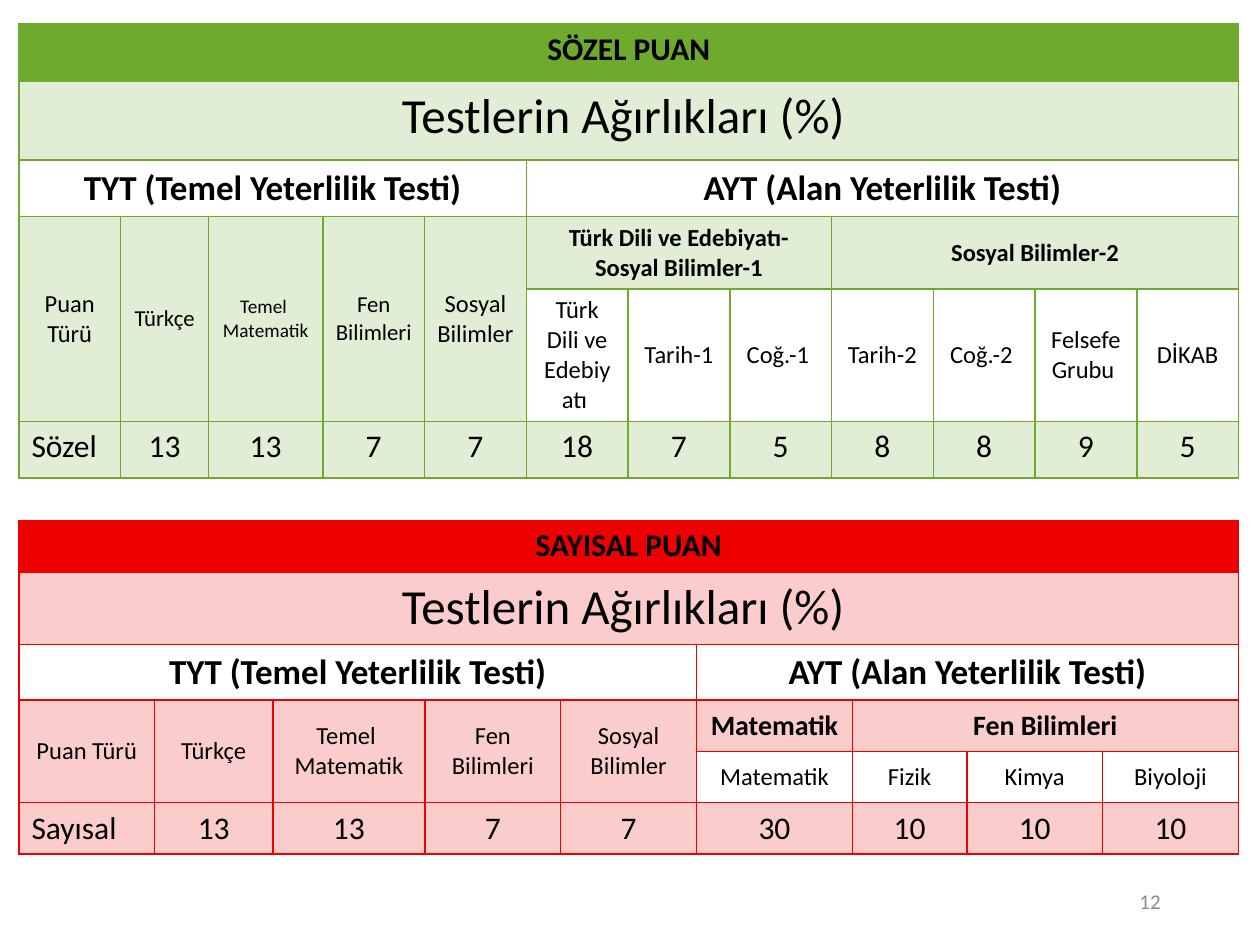
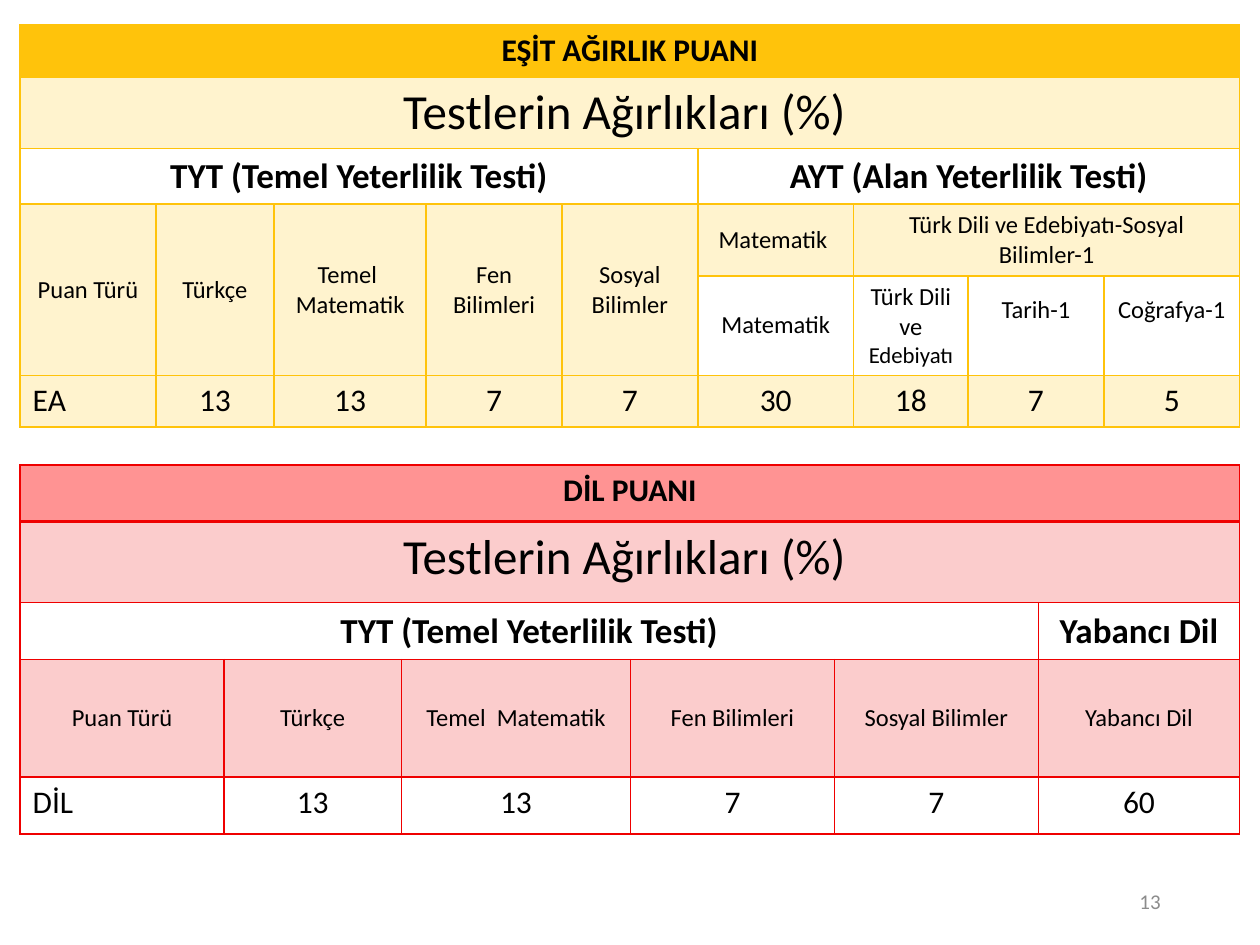
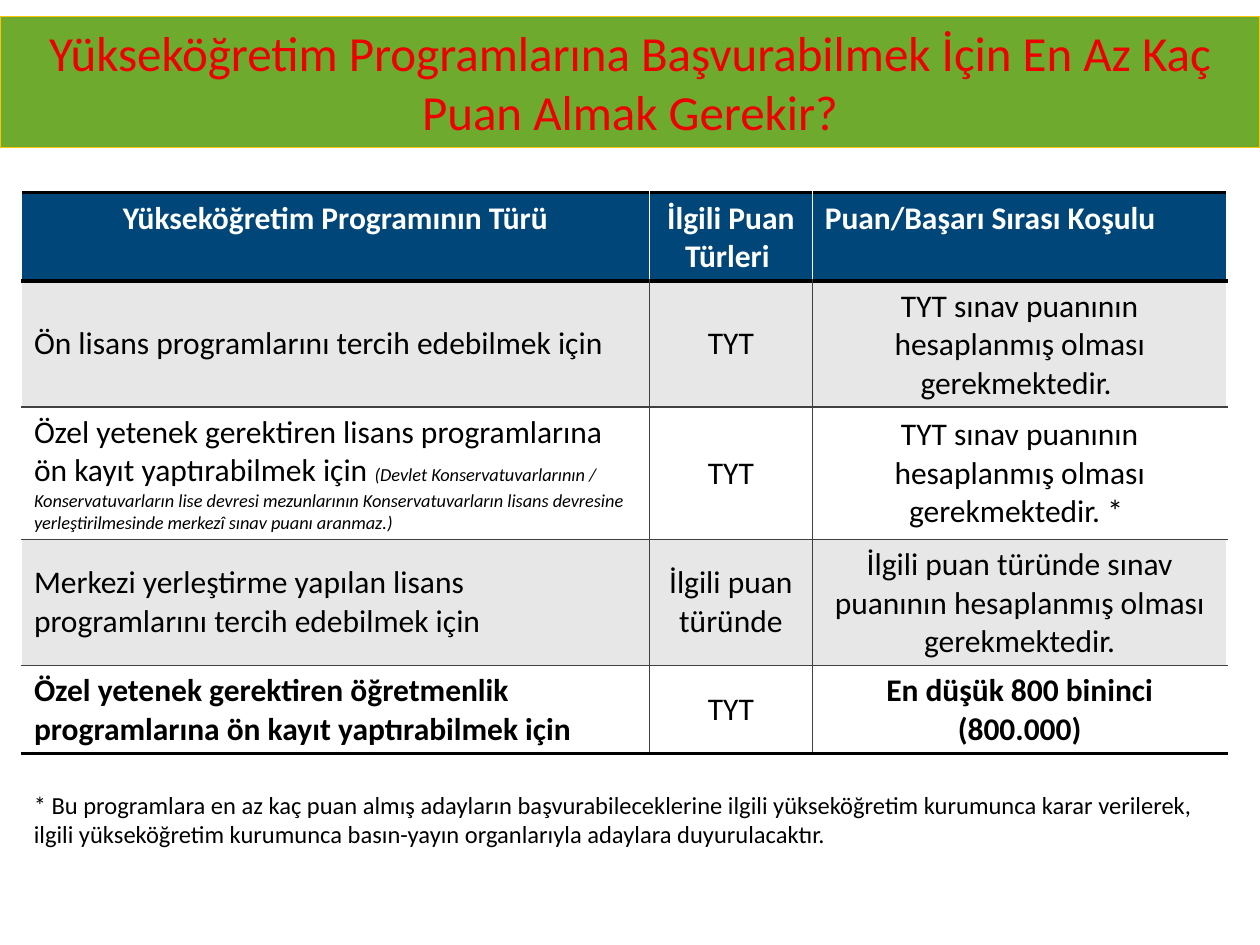
from lxml.etree import SubElement
from pptx import Presentation
from pptx.dml.color import RGBColor
from pptx.enum.shapes import MSO_SHAPE
from pptx.enum.text import MSO_ANCHOR, MSO_AUTO_SIZE, PP_ALIGN
from pptx.oxml.ns import qn
from pptx.util import Inches, Pt

GREEN, RED, YELLOW, PINK = "6DAA2D", "EF0000", "FFC30B", "FF9393"
NAVY, BLACK, WHITE = "004678", "000000", "FFFFFF"
DARK_GRAY, MID_GRAY, LIGHT_GRAY = "404040", "8C8C8C", "E7E7E7"
GRID_COLS, GRID_ROWS = 100, 75
TYT = ["Puan Türü", "Türkçe", "Temel  Matematik", "Fen Bilimleri", "Sosyal Bilimler"]
AYT = "AYT (Alan Yeterlilik Testi)"
NINE_COLS = [1.08, 0.94, 1.21, 1.08, 1.08, 1.24, 0.91, 1.08, 1.08]


def rgb(color):
    return RGBColor.from_string(color)


class Deck:
    font = "Calibri"
    left, center, right = PP_ALIGN.LEFT, PP_ALIGN.CENTER, PP_ALIGN.RIGHT
    top, middle = MSO_ANCHOR.TOP, MSO_ANCHOR.MIDDLE

    def __init__(self):
        self.prs = Presentation()
        self.prs.slide_width, self.prs.slide_height = Inches(10), Inches(7.5)
        self.s = None

    def new_slide(self):
        self.s = self.prs.slides.add_slide(self.prs.slide_layouts[6])

    def box(self, col, row, cols, rows):
        w = self.prs.slide_width / GRID_COLS
        h = self.prs.slide_height / GRID_ROWS
        return [round(v) for v in (col * w, row * h, cols * w, rows * h)]

    def set_text(self, tf, text, size, color=BLACK, bold=False, align=PP_ALIGN.CENTER):
        tf.text = text
        p = tf.paragraphs[0]
        p.alignment = align
        self.style(p.runs[0], size, color, bold)

    def style(self, r, size, color=BLACK, bold=False, italic=False):
        r.font.name, r.font.size = self.font, Pt(size)
        r.font.bold, r.font.italic = bold, italic
        r.font.color.rgb = rgb(color)

    def add_run(self, tf, text, size, italic=False):
        r = tf.paragraphs[0].add_run()
        r.text = text
        self.style(r, size, italic=italic)

    def text(self, area, text, size, color=BLACK, align=PP_ALIGN.LEFT, anchor=MSO_ANCHOR.TOP):
        tf = self.s.shapes.add_textbox(*self.box(*area)).text_frame
        tf.word_wrap = True
        tf.vertical_anchor = anchor
        self.set_text(tf, text, size, color, align=align)

    def page_number(self, number):
        self.text((70.6, 69.5, 22.5, 4), str(number), 12, MID_GRAY, self.right, self.middle)

    def banner(self, area, text):
        sp = self.s.shapes.add_shape(MSO_SHAPE.RECTANGLE, *self.box(*area))
        sp.shadow.inherit = False
        sp.fill.solid()
        sp.fill.fore_color.rgb = rgb(GREEN)
        sp.line.color.rgb = rgb(YELLOW)
        sp.line.width = Pt(0.5)
        tf = sp.text_frame
        tf.word_wrap = True
        tf.auto_size = MSO_AUTO_SIZE.SHAPE_TO_FIT_TEXT
        tf.vertical_anchor = self.top
        self.set_text(tf, text, 28, RED)

    def table(self, area, widths, heights, row_line, col_line):
        x, y, w, h = self.box(*area)
        n, m = len(heights), len(widths)
        t = self.s.shapes.add_table(n, m, x, y, w, h).table
        t.first_row = t.horz_banding = False
        for column, share in zip(t.columns, widths):
            column.width = round(w * share / sum(widths))
        for row, share in zip(t.rows, heights):
            row.height = round(h * share / sum(heights))
        for i in range(n):
            for j in range(m):
                sides = {"L": col_line(i, j), "R": col_line(i, j + 1),
                         "T": row_line(i), "B": row_line(i + 1)}
                self.borders(t.cell(i, j), sides)
        return t

    def borders(self, cell, sides):
        tc_pr = cell._tc.get_or_add_tcPr()
        for side, line in sides.items():
            if line:
                color, width = line
                ln = SubElement(tc_pr, qn(f"a:ln{side}"), w=str(Pt(width)))
                fill = SubElement(ln, qn("a:solidFill"))
                SubElement(fill, qn("a:srgbClr"), val=color)

    def cell(self, t, row, col, text, size, fill=WHITE, alpha=None, span=(1, 1),
             anchor=MSO_ANCHOR.MIDDLE, **fmt):
        c = t.cell(row, col)
        if span != (1, 1):
            c.merge(t.cell(row + span[0] - 1, col + span[1] - 1))
        c.fill.solid()
        c.fill.fore_color.rgb = rgb(fill)
        if alpha:
            clr = c._tc.tcPr.find(qn("a:solidFill")).find(qn("a:srgbClr"))
            SubElement(clr, qn("a:alpha"), val=str(alpha * 1000))
        c.vertical_anchor = anchor
        self.set_text(c.text_frame, text, size, **fmt)

    def score_table(self, area, widths, heights, title, color, groups, values, section=AYT,
                    title_fill=None, tyt_sizes=(14,) * 5, group_size=14, group_bold=True):
        t = self.table(area, widths, heights,
                       lambda k: (color, 2 if k == 1 else 1),
                       lambda row, k: (color, 1))
        n, m, k = len(heights), len(widths), len(TYT)
        tint = dict(fill=color, alpha=20)
        nested = n == 6
        self.cell(t, 0, 0, title, 18, title_fill or color, span=(1, m), anchor=self.top, bold=True)
        self.cell(t, 1, 0, "Testlerin Ağırlıkları (%) ", 28, span=(1, m), anchor=self.top, **tint)
        self.cell(t, 2, 0, "TYT (Temel Yeterlilik Testi)", 20, span=(1, k), bold=True)
        self.cell(t, 2, k, section, 20, span=(1, m - k), bold=True)
        for j, (name, size) in enumerate(zip(TYT, tyt_sizes)):
            self.cell(t, 3, j, name, size, span=(2 if nested else 1, 1), **tint)
        col = k
        for name, tests in groups:
            count = max(1, len(tests))
            self.cell(t, 3, col, name, group_size, span=(1, count), bold=group_bold, **tint)
            for j, test in enumerate(tests, col):
                self.cell(t, 4, j, test, 14)
            col += count
        for j, value in enumerate(values):
            self.cell(t, n - 1, j, str(value), 18, anchor=self.top,
                      align=self.center if j else self.left, **(tint if nested else {}))
        return t

    def condition_table(self, area, widths, heights, header, rows):
        last = len(heights)
        t = self.table(
            area, widths, heights,
            lambda k: (BLACK, 2) if k in (0, 1, last) else (DARK_GRAY, 1),
            lambda row, k: (DARK_GRAY if row else WHITE, 1) if 0 < k < len(widths) else None)
        for j, name in enumerate(header):
            self.cell(t, 0, j, name, 18, NAVY, anchor=self.top, color=WHITE, bold=True,
                      align=self.left if j == 2 else self.center)
        for i, texts in enumerate(rows, 1):
            for j, text in enumerate(texts):
                self.cell(t, i, j, text, 18, LIGHT_GRAY if i % 2 else WHITE,
                          bold=i == len(rows) and j != 1,
                          align=self.center if j else self.left)
        return t


def verbal_and_numeric(d):
    d.new_slide()
    d.score_table(
        (1.5, 1.9, 96.8, 35.9), [0.81, 0.7, 0.91] + [0.81] * 9,
        [0.45, 0.63, 0.45, 0.56, 1.05, 0.45], "SÖZEL PUAN", GREEN,
        [("Türk Dili ve Edebiyatı- Sosyal Bilimler-1",
          ["Türk Dili ve Edebiyatı ", "Tarih-1", "Coğ.-1 "]),
         ("Sosyal Bilimler-2", ["Tarih-2", "Coğ.-2 ", "Felsefe Grubu ", "DİKAB"])],
        ["Sözel", 13, 13, 7, 7, 18, 7, 5, 8, 8, 9, 5], tyt_sizes=(14, 13, 11, 13, 14))
    d.score_table(
        (1.5, 41.3, 96.8, 26.4), NINE_COLS, [0.41, 0.57, 0.44, 0.41, 0.41, 0.41],
        "SAYISAL PUAN", RED,
        [("Matematik ", ["Matematik"]), ("Fen Bilimleri", ["Fizik", "Kimya", "Biyoloji"])],
        ["Sayısal", 13, 13, 7, 7, 30, 10, 10, 10], group_size=16)
    d.page_number(12)


def equal_weight_and_language(d):
    d.new_slide()
    d.score_table(
        (1.6, 36.9, 96.8, 29.3), [1.62, 1.41, 1.82, 1.62, 1.62, 1.6],
        [0.45, 0.64, 0.45, 0.93, 0.45], "DİL PUANI", RED, [("Yabancı Dil", [])],
        ["DİL", 13, 13, 7, 7, 60], section="Yabancı Dil", title_fill=PINK, group_bold=False)
    t = d.score_table(
        (1.6, 2, 96.8, 31.9), NINE_COLS, [0.41, 0.57, 0.44, 0.57, 0.79, 0.41],
        "EŞİT AĞIRLIK PUANI", YELLOW,
        [("Matematik ", ["Matematik"]),
         ("Türk Dili ve Edebiyatı-Sosyal Bilimler-1",
          ["Türk Dili ve ", "Tarih-1", "Coğrafya-1 "])],
        ["EA", 13, 13, 7, 7, 30, 18, 7, 5], group_bold=False)
    d.add_run(t.cell(4, 6).text_frame, "Edebiyatı ", 13)
    for col in (7, 8):
        t.cell(4, col).margin_bottom = Inches(0.29)
    d.page_number(13)


def minimum_scores(d):
    d.new_slide()
    d.banner((0, 1.3, 100, 10.4),
             "Yükseköğretim Programlarına Başvurabilmek İçin En Az Kaç Puan Almak Gerekir?")
    t = d.condition_table(
        (1.7, 15.3, 95.7, 44.5), [4.98, 1.29, 3.29], [0.7, 1, 1.05, 1, 0.7],
        ["Yükseköğretim Programının Türü", "İlgili Puan Türleri ", "Puan/Başarı Sırası Koşulu"],
        [["Ön lisans programlarını tercih edebilmek için", "TYT",
          "TYT sınav puanının hesaplanmış olması gerekmektedir. "],
         ["Özel yetenek gerektiren lisans programlarına ön kayıt yaptırabilmek için ", "TYT",
          "TYT sınav puanının hesaplanmış olması gerekmektedir. * "],
         ["Merkezi yerleştirme yapılan lisans programlarını tercih edebilmek için",
          "İlgili puan türünde",
          "İlgili puan türünde sınav puanının hesaplanmış olması gerekmektedir."],
         ["Özel yetenek gerektiren öğretmenlik programlarına ön kayıt yaptırabilmek için", "TYT",
          "En düşük 800 bininci (800.000)"]])
    d.add_run(t.cell(2, 0).text_frame,
              "(Devlet Konservatuvarlarının / Konservatuvarların lise devresi mezunlarının "
              "Konservatuvarların lisans devresine yerleştirilmesinde merkezî sınav puanı "
              "aranmaz.)", 10.5, italic=True)
    d.text((1.7, 62.2, 95.7, 8.8),
           "* Bu programlara en az kaç puan almış adayların başvurabileceklerine ilgili "
           "yükseköğretim kurumunca karar verilerek, ilgili yükseköğretim kurumunca "
           "basın-yayın organlarıyla adaylara duyurulacaktır.", 14)


def main():
    d = Deck()
    verbal_and_numeric(d)
    equal_weight_and_language(d)
    minimum_scores(d)
    d.prs.save("out.pptx")


if __name__ == "__main__":
    main()
